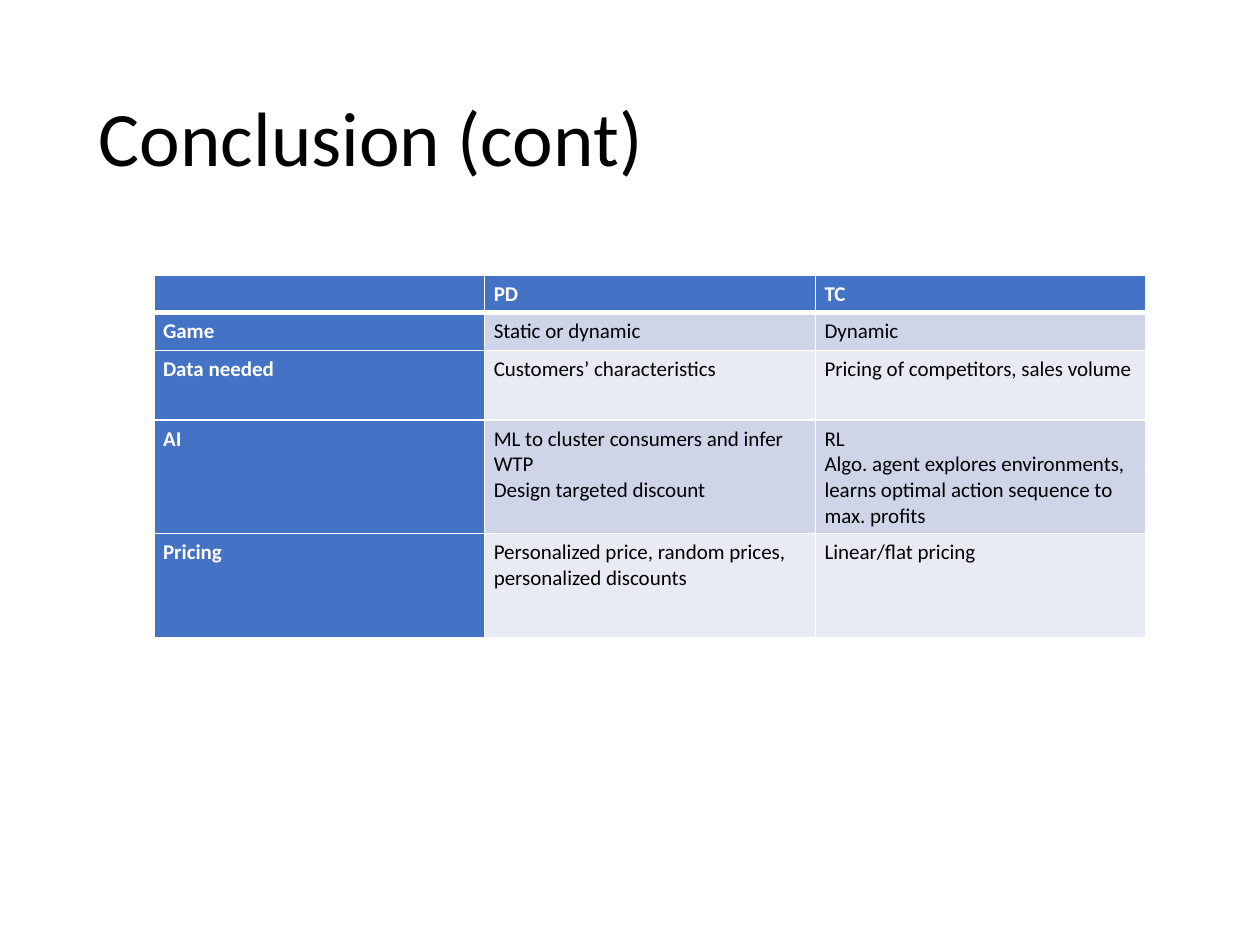
from dataclasses import dataclass

from lxml.etree import SubElement
from pptx import Presentation
from pptx.dml.color import RGBColor
from pptx.enum.text import MSO_ANCHOR
from pptx.oxml.ns import qn
from pptx.util import Pt

FONT = "Calibri"
BLACK, WHITE, BLUE = "000000", "FFFFFF", "4472C4"
BANDS = ("CFD5E9", "E8EBF4")
TABLE_LEFT, TABLE_TOP, COLUMN_WIDTH = 88, 157, 189
THIN, THICK = 0.96, 3


@dataclass
class Row:
    height: float
    cells: tuple[str, str, str]


ROWS = [
    Row(20.2, ("", "PD", "TC")),
    Row(20.2, ("Game", "Static or dynamic", "Dynamic")),
    Row(39.8, ("Data needed", "Customers’ characteristics",
               "Pricing of competitors, sales volume")),
    Row(59.8, ("AI",
               "ML to cluster consumers and infer WTP\nDesign targeted discount",
               "RL\nAlgo. agent explores environments, learns optimal action "
               "sequence to max. profits")),
    Row(59.8, ("Pricing",
               "Personalized price, random prices, personalized discounts",
               "Linear/flat pricing")),
]


def color(value: str) -> RGBColor:
    return RGBColor.from_string(value)


def write_text(frame, text: str, *, size: float, fill: str = BLACK,
               bold: bool = False, line_spacing: float = 1.0) -> None:
    """Write one paragraph for each line of text."""
    for index, line in enumerate(text.split("\n")):
        paragraph = frame.add_paragraph() if index else frame.paragraphs[0]
        paragraph.line_spacing = line_spacing
        if not line:
            # An empty paragraph takes its height from its end mark
            SubElement(paragraph._p, qn("a:endParaRPr"), sz=str(int(size * 100)))
            continue
        run = paragraph.add_run()
        run.text = line
        run.font.name = FONT
        run.font.size = Pt(size)
        run.font.bold = bold
        run.font.color.rgb = color(fill)


def set_borders(cell, widths: dict[str, float]) -> None:
    """Add white borders; they must stand before the fill in the cell."""
    properties = cell._tc.get_or_add_tcPr()
    for side, width in widths.items():
        line = SubElement(properties, qn(f"a:ln{side}"), w=str(Pt(width)))
        fill = SubElement(line, qn("a:solidFill"))
        SubElement(fill, qn("a:srgbClr"), val=WHITE)


def draw_cell(cell, text: str, row: int, column: int) -> None:
    is_header = row == 0 or column == 0
    set_borders(cell, {"L": THIN, "R": THIN,
                       "T": THICK if row == 1 else THIN,
                       "B": THICK if row == 0 else THIN})
    cell.fill.solid()
    cell.fill.fore_color.rgb = color(BLUE if is_header else BANDS[(row - 1) % 2])
    cell.margin_left = cell.margin_right = Pt(5.2)
    cell.margin_top = cell.margin_bottom = Pt(3.6)
    write_text(cell.text_frame, text, size=12, bold=is_header,
               fill=WHITE if is_header else BLACK)


def draw_table(slide, rows: list[Row]) -> None:
    column_count = len(rows[0].cells)
    table = slide.shapes.add_table(
        len(rows), column_count, Pt(TABLE_LEFT), Pt(TABLE_TOP),
        Pt(COLUMN_WIDTH * column_count), Pt(sum(row.height for row in rows))).table
    table.first_col = True
    for column in table.columns:
        column.width = Pt(COLUMN_WIDTH)
    for row_index, row in enumerate(rows):
        table.rows[row_index].height = Pt(row.height)
        for column_index, text in enumerate(row.cells):
            draw_cell(table.cell(row_index, column_index), text,
                      row_index, column_index)


def draw_title(slide, text: str) -> None:
    frame = slide.shapes.add_textbox(Pt(49.5), Pt(28.8), Pt(621), Pt(104.4)).text_frame
    frame.word_wrap = True
    frame.vertical_anchor = MSO_ANCHOR.MIDDLE
    write_text(frame, text, size=44, line_spacing=0.9)


def main() -> None:
    presentation = Presentation()
    presentation.slide_width, presentation.slide_height = Pt(720), Pt(540)
    slide = presentation.slides.add_slide(presentation.slide_layouts[6])

    # Title
    draw_title(slide, "Conclusion (cont)")

    # Comparison of the two cases
    draw_table(slide, ROWS)

    presentation.save("out.pptx")


if __name__ == "__main__":
    main()
